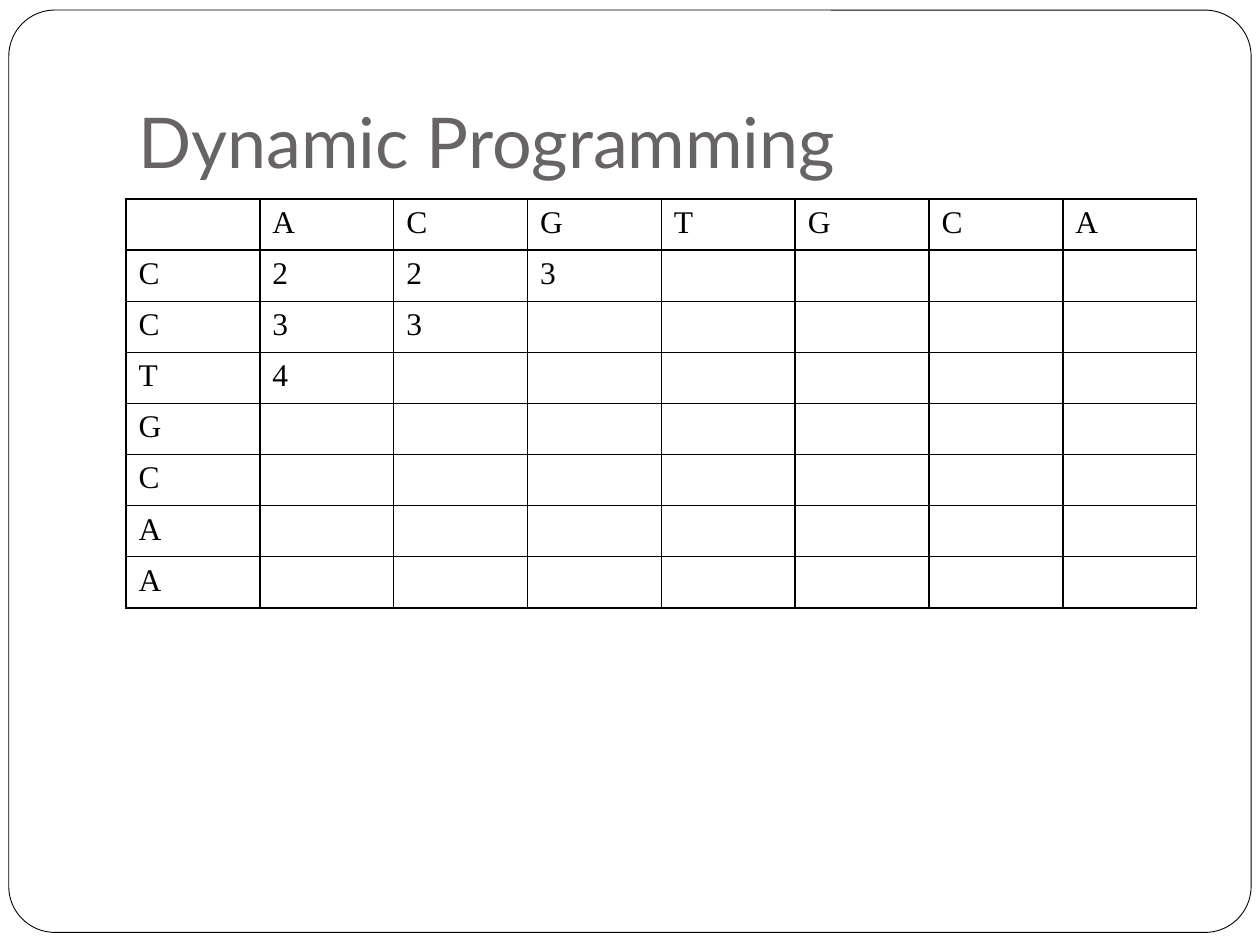
from dataclasses import dataclass

from lxml import etree
from pptx import Presentation
from pptx.dml.color import RGBColor
from pptx.enum import shapes, text
from pptx.oxml import ns
from pptx.slide import Slide
from pptx.table import _Cell
from pptx.util import Inches, Pt


@dataclass(frozen=True)
class Theme:
    paper: RGBColor = RGBColor(0xFF, 0xFF, 0xFF)
    ink: RGBColor = RGBColor(0, 0, 0)
    heading: RGBColor = RGBColor(0x69, 0x64, 0x64)
    heading_font: str = "Lato"
    grid_font: str = "Times New Roman"
    heading_size: Pt = Pt(40)
    grid_size: Pt = Pt(18)
    frame_line: Pt = Pt(0.5)
    grid_line: Pt = Pt(1)


@dataclass(frozen=True)
class Box:
    left: float
    top: float
    width: float
    height: float

    def lengths(self) -> tuple[Inches, ...]:
        return tuple(map(Inches, (self.left, self.top, self.width, self.height)))


@dataclass(frozen=True)
class ScoreRow:
    base: str
    scores: tuple[int, ...] = ()


THEME = Theme()
FRAME = Box(0.07, 0.08, 9.86, 7.32)
HEADING = Box(1, 0.3, 8.5, 1.25)
GRID = Box(1, 1.58, 8.5, 3.24)
TOP_SEQUENCE = "ACGTGCA"
SCORE_ROWS = (
    ScoreRow("C", (2, 2, 3)),
    ScoreRow("C", (3, 3)),
    ScoreRow("T", (4,)),
    ScoreRow("G"),
    ScoreRow("C"),
    ScoreRow("A"),
    ScoreRow("A"),
)


def draw_frame(slide: Slide, box: Box) -> None:
    frame = slide.shapes.add_shape(
        shapes.MSO_SHAPE.ROUNDED_RECTANGLE, *box.lengths()
    )
    frame.adjustments[0] = 0.05
    frame.shadow.inherit = False
    frame.fill.solid()
    frame.fill.fore_color.rgb = THEME.paper
    frame.line.color.rgb = THEME.ink
    frame.line.width = THEME.frame_line
    slide.shapes._spTree.insert(2, frame._element)


def write_heading(slide: Slide, box: Box, wording: str) -> None:
    heading = slide.shapes.title
    heading.left, heading.top, heading.width, heading.height = box.lengths()
    frame = heading.text_frame
    frame.text = wording
    frame.word_wrap = True
    frame.auto_size = text.MSO_AUTO_SIZE.NONE
    frame.vertical_anchor = text.MSO_ANCHOR.BOTTOM
    frame.margin_bottom = Inches(0.1)
    paragraph = frame.paragraphs[0]
    paragraph.alignment = text.PP_ALIGN.LEFT
    font = paragraph.runs[0].font
    font.name = THEME.heading_font
    font.size = THEME.heading_size
    font.color.rgb = THEME.heading


def outline_cell(cell: _Cell) -> None:
    properties = cell._tc.get_or_add_tcPr()
    for side in ("a:lnL", "a:lnR", "a:lnT", "a:lnB"):
        border = etree.SubElement(
            properties, ns.qn(side), w=str(int(THEME.grid_line))
        )
        fill = etree.SubElement(border, ns.qn("a:solidFill"))
        etree.SubElement(fill, ns.qn("a:srgbClr"), val=str(THEME.ink))


def write_cell(cell: _Cell, wording: str) -> None:
    outline_cell(cell)
    cell.fill.background()
    cell.text_frame.text = wording
    for run in cell.text_frame.paragraphs[0].runs:
        run.font.name = THEME.grid_font
        run.font.size = THEME.grid_size
        run.font.bold = False
        run.font.color.rgb = THEME.ink


def draw_scores(
    slide: Slide, box: Box, sequence: str, score_rows: tuple[ScoreRow, ...]
) -> None:
    lines = [["", *sequence]]
    lines += [[row.base, *map(str, row.scores)] for row in score_rows]
    column_count = len(sequence) + 1
    grid = slide.shapes.add_table(len(lines), column_count, *box.lengths()).table
    grid.first_row = False
    grid.horz_banding = False
    for column in grid.columns:
        column.width = Inches(box.width / column_count)
    for row, line in zip(grid.rows, lines):
        row.height = Inches(box.height / len(lines))
        padded = line + [""] * (column_count - len(line))
        for cell, wording in zip(row.cells, padded):
            write_cell(cell, wording)


def main() -> None:
    deck = Presentation()
    deck.slide_width, deck.slide_height = Inches(10), Inches(7.5)
    slide = deck.slides.add_slide(deck.slide_layouts.get_by_name("Title Only"))
    draw_frame(slide, FRAME)
    write_heading(slide, HEADING, "Dynamic Programming")
    draw_scores(slide, GRID, TOP_SEQUENCE, SCORE_ROWS)
    deck.save("out.pptx")


if __name__ == "__main__":
    main()
